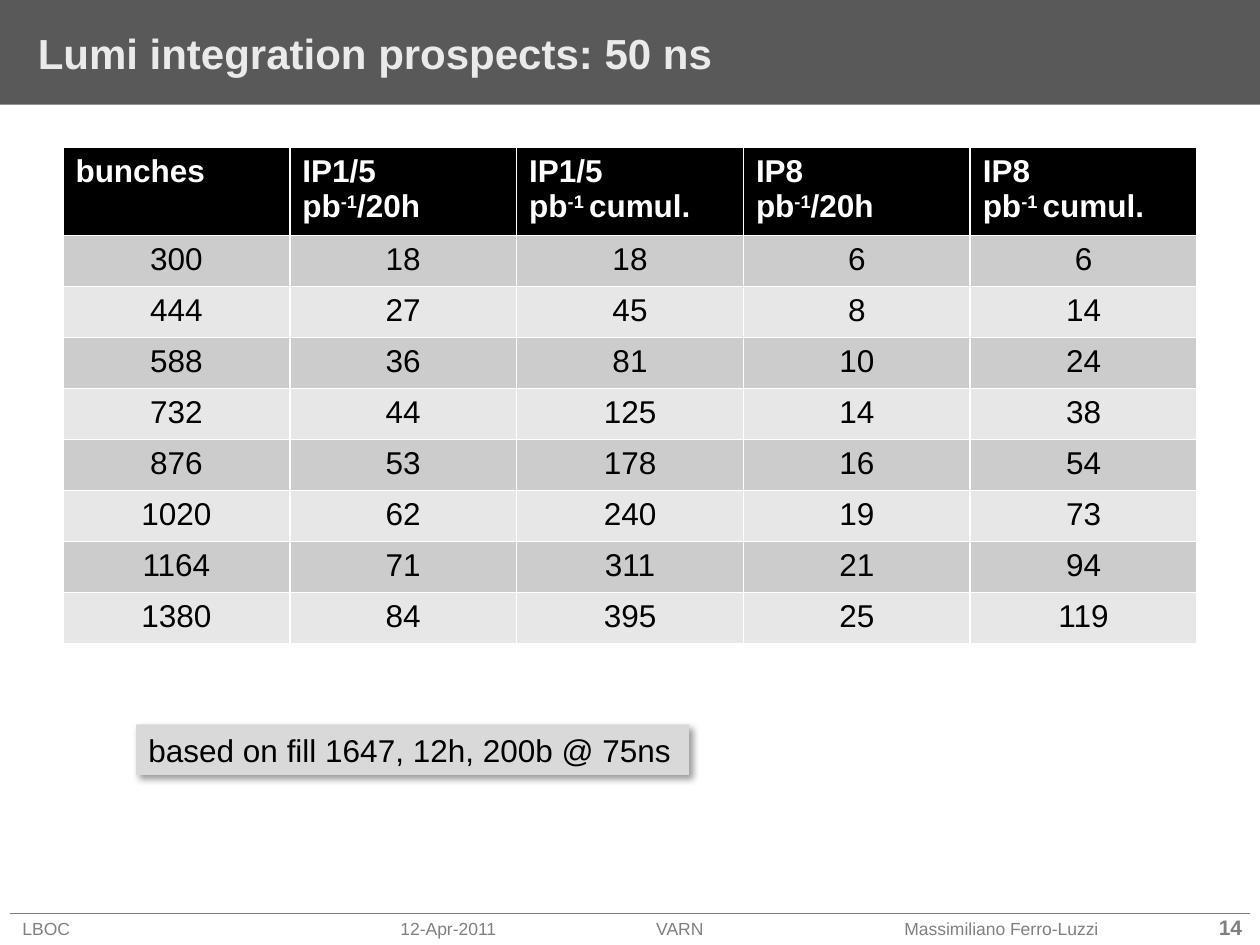
from typing import NamedTuple

from lxml import etree
from pptx import Presentation
from pptx.dml.color import RGBColor
from pptx.enum import shapes, text
from pptx.oxml import ns
from pptx.util import Inches, Pt

WHITE = RGBColor(0xFF, 0xFF, 0xFF)
BLACK = RGBColor(0x00, 0x00, 0x00)
TITLE_FILL = RGBColor(0x59, 0x59, 0x59)
TITLE_TEXT = RGBColor(0xEA, 0xEA, 0xEA)
FOOTER_GREY = RGBColor(0x80, 0x80, 0x80)
NOTE_FILL = RGBColor(0xD9, 0xD9, 0xD9)
BAND_FILLS = (RGBColor(0xCC, 0xCC, 0xCC), RGBColor(0xE7, 0xE7, 0xE7))


class Heading(NamedTuple):
    name: str
    exponent: str = ""
    suffix: str = ""


class TabStop(NamedTuple):
    position: float
    align: str


HEADINGS = (
    Heading("bunches"),
    Heading("IP1/5", "-1", "/20h"),
    Heading("IP1/5", "-1 ", "cumul."),
    Heading("IP8", "-1", "/20h"),
    Heading("IP8", "-1 ", "cumul."),
)
LUMI_ROWS = (
    (300, 18, 18, 6, 6),
    (444, 27, 45, 8, 14),
    (588, 36, 81, 10, 24),
    (732, 44, 125, 14, 38),
    (876, 53, 178, 16, 54),
    (1020, 62, 240, 19, 73),
    (1164, 71, 311, 21, 94),
    (1380, 84, 395, 25, 119),
)
FOOTER_TEXT = "LBOC\t12-Apr-2011\tVARN\tMassimiliano Ferro-Luzzi\t"
FOOTER_TABS = (TabStop(3, "l"), TabStop(5.03, "l"), TabStop(7, "l"), TabStop(9.68, "r"))


def style(para, size: float, color: RGBColor, bold: bool = False) -> None:
    para.font.name = "Arial"
    para.font.size = Pt(size)
    para.font.bold = bold
    para.font.color.rgb = color


def set_margins(frame, side: float, end: float) -> None:
    frame.margin_left = frame.margin_right = Inches(side)
    frame.margin_top = frame.margin_bottom = Inches(end)


def add_title(page, wording: str) -> None:
    title = page.shapes.title
    title.left, title.top = Inches(0), Inches(0)
    title.width, title.height = Inches(10), Inches(0.83)
    title.fill.solid()
    title.fill.fore_color.rgb = TITLE_FILL
    frame = title.text_frame
    frame.text = wording
    frame.vertical_anchor = text.MSO_ANCHOR.MIDDLE
    set_margins(frame, 0.3, 0.05)
    para = frame.paragraphs[0]
    para.alignment = text.PP_ALIGN.LEFT
    style(para, 24, TITLE_TEXT, bold=True)


def fill_heading(cell, heading: Heading) -> None:
    frame = cell.text_frame
    frame.text = heading.name
    if heading.exponent:
        unit = frame.add_paragraph()
        unit.add_run().text = "pb"
        exponent = unit.add_run()
        exponent.text = heading.exponent
        exponent._r.get_or_add_rPr().set("baseline", "30000")
        unit.add_run().text = heading.suffix
    for para in frame.paragraphs:
        style(para, 18, WHITE, bold=True)


def add_lumi_table(page) -> None:
    """White cell borders come from the default table style."""
    table = page.shapes.add_table(
        len(LUMI_ROWS) + 1, len(HEADINGS),
        Inches(0.5), Inches(1.17), Inches(9), Inches(3.89),
    ).table
    table.rows[0].height = Inches(0.65)
    for column, heading in enumerate(HEADINGS):
        cell = table.cell(0, column)
        cell.fill.solid()
        cell.fill.fore_color.rgb = BLACK
        fill_heading(cell, heading)
    for index, values in enumerate(LUMI_ROWS):
        table.rows[index + 1].height = Inches(0.405)
        for column, value in enumerate(values):
            cell = table.cell(index + 1, column)
            cell.fill.solid()
            cell.fill.fore_color.rgb = BAND_FILLS[index % 2]
            cell.text = str(value)
            para = cell.text_frame.paragraphs[0]
            para.alignment = text.PP_ALIGN.CENTER
            style(para, 18, BLACK)


def add_drop_shadow(shape) -> None:
    shape.shadow.inherit = False
    effects = shape._element.spPr.find(ns.qn("a:effectLst"))
    shadow = etree.SubElement(
        effects, ns.qn("a:outerShdw"),
        blurRad=str(Pt(4)), dist=str(Pt(3)), dir=str(45 * 60000),
    )
    color = etree.SubElement(shadow, ns.qn("a:srgbClr"), val=str(BLACK))
    etree.SubElement(color, ns.qn("a:alpha"), val="40000")


def add_note(page, wording: str) -> None:
    note = page.shapes.add_shape(
        shapes.MSO_SHAPE.RECTANGLE, Inches(1.08), Inches(5.75), Inches(4.39), Inches(0.4)
    )
    note.fill.solid()
    note.fill.fore_color.rgb = NOTE_FILL
    note.line.fill.background()
    add_drop_shadow(note)
    frame = note.text_frame
    frame.text = wording
    frame.word_wrap = False
    frame.vertical_anchor = text.MSO_ANCHOR.TOP
    para = frame.paragraphs[0]
    para.alignment = text.PP_ALIGN.LEFT
    style(para, 18, BLACK)


def add_footer(page, number: int) -> None:
    top = Inches(7.25)
    rule = page.shapes.add_connector(
        shapes.MSO_CONNECTOR.STRAIGHT, Inches(0.08), top, Inches(9.92), top
    )
    rule.line.color.rgb = FOOTER_GREY
    rule.line.width = Pt(1)
    etree.SubElement(rule._element.spPr, ns.qn("a:effectLst"))

    box = page.shapes.add_textbox(Inches(0.08), top, Inches(9.92), Inches(0.22))
    frame = box.text_frame
    frame.word_wrap = True
    set_margins(frame, 0.1, 0.01)
    para = frame.paragraphs[0]
    tabs = etree.SubElement(para._p.get_or_add_pPr(), ns.qn("a:tabLst"))
    for stop in FOOTER_TABS:
        etree.SubElement(
            tabs, ns.qn("a:tab"), pos=str(Inches(stop.position)), algn=stop.align
        )
    style(para, 10, FOOTER_GREY)
    para.add_run().text = FOOTER_TEXT
    page_number = para.add_run()
    page_number.text = str(number)
    page_number.font.size = Pt(12)
    page_number.font.bold = True


def main() -> None:
    deck = Presentation()
    deck.slide_width, deck.slide_height = Inches(10), Inches(7.5)
    page = deck.slides.add_slide(deck.slide_layouts[5])
    add_footer(page, 14)
    add_title(page, "Lumi integration prospects: 50 ns")
    add_lumi_table(page)
    add_note(page, "based on fill 1647, 12h, 200b @ 75ns")
    deck.save("out.pptx")


if __name__ == "__main__":
    main()
